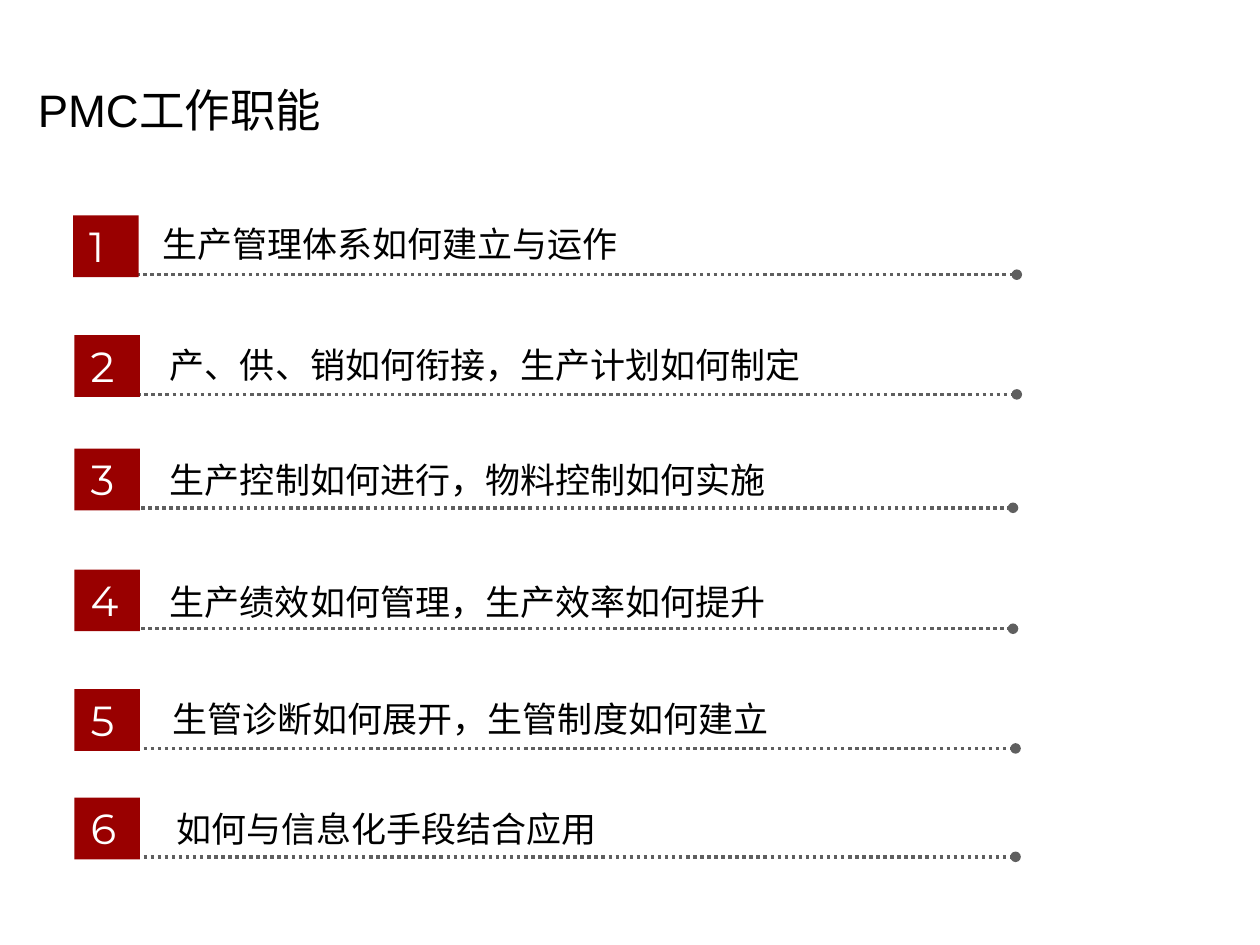
from lxml.etree import SubElement
from pptx import Presentation
from pptx.dml.color import RGBColor
from pptx.enum.dml import MSO_LINE_DASH_STYLE as Dash
from pptx.enum.shapes import MSO_CONNECTOR as Connector, MSO_SHAPE as Shape
from pptx.enum.text import MSO_ANCHOR as Anchor, MSO_AUTO_SIZE as AutoSize, PP_ALIGN as Align
from pptx.oxml.ns import qn
from pptx.util import Inches, Pt

TITLE = "PMC工作职能"
ROWS = [
    {"text": "生产管理体系如何建立与运作", "badge": (0.58, 1.71), "box": (1.19, 1.72, 6.8), "rule": (1.08, 8.07)},
    {"text": "产、供、销如何衔接，生产计划如何制定", "badge": (0.59, 2.66), "box": (1.25, 2.68, 5.95), "rule": (1.09, 8.07)},
    {"text": "生产控制如何进行，物料控制如何实施", "badge": (0.59, 3.56), "box": (1.25, 3.59, 6.11), "rule": (1.12, 8.04)},
    {"text": "生产绩效如何管理，生产效率如何提升", "badge": (0.59, 4.52), "box": (1.25, 4.56, 5.07), "rule": (1.12, 8.04)},
    {"text": "生管诊断如何展开，生管制度如何建立", "badge": (0.59, 5.47), "box": (1.27, 5.49, 5.07), "rule": (1.14, 8.06)},
    {"text": "如何与信息化手段结合应用", "badge": (0.59, 6.33), "box": (1.3, 6.36, 5.07), "rule": (1.14, 8.06)},
]
THEME = {
    "badge": RGBColor(0x99, 0x00, 0x00),
    "rule": RGBColor(0x5F, 0x5F, 0x5F),
    "title": {"name": "Arial", "size": Pt(26), "color": RGBColor(0, 0, 0)},
    "item": {"name": "Arial", "size": Pt(20), "color": RGBColor(0, 0, 0)},
    "number": {"name": "Montserrat", "size": Pt(24), "color": RGBColor(255, 255, 255)},
}
BADGE_SIZE = (0.52, 0.49)
NUMBER_SIZE = (0.49, 0.5)
ITEM_HEIGHT = 0.43
RULE_DROP = 0.47


def write_text(shape, text, style):
    frame = shape.text_frame
    frame.text = text
    settings = {"word_wrap": True, "auto_size": AutoSize.SHAPE_TO_FIT_TEXT, "vertical_anchor": Anchor.TOP}
    for name, value in settings.items():
        setattr(frame, name, value)
    paragraph = frame.paragraphs[0]
    paragraph.alignment = Align.LEFT
    font = paragraph.runs[0].font
    for name in ("name", "size"):
        setattr(font, name, style[name])
    font.color.rgb = style["color"]


def add_text(shapes, place, text, style):
    box = shapes.add_textbox(*map(Inches, place))
    write_text(box, text, THEME[style])


def add_rule(shapes, start, end, top):
    rule = shapes.add_connector(Connector.STRAIGHT, *map(Inches, (start, top, end, top)))
    rule.line.color.rgb = THEME["rule"]
    rule.line.width = Pt(2)
    rule.line.dash_style = Dash.ROUND_DOT
    properties = rule.line._get_or_add_ln()
    properties.find(qn("a:prstDash")).set("val", "sysDot")
    SubElement(properties, qn("a:tailEnd"), type="oval")
    SubElement(rule._element.spPr, qn("a:effectLst"))


def add_badge(shapes, left, top, number):
    group = shapes.add_group_shape()
    square = group.shapes.add_shape(Shape.RECTANGLE, *map(Inches, (left, top, *BADGE_SIZE)))
    square.shadow.inherit = False
    square.fill.solid()
    square.fill.fore_color.rgb = THEME["badge"]
    square.line.fill.background()
    add_text(group.shapes, (left + 0.03, top - 0.01, *NUMBER_SIZE), str(number), "number")


def main():
    presentation = Presentation()
    presentation.slide_width, presentation.slide_height = Inches(10), Inches(7.5)
    slide = presentation.slides.add_slide(presentation.slide_layouts[5])
    title = slide.shapes.title
    for name, value in {"left": 0.2, "top": 0.6, "width": 3.47, "height": 0.53}.items():
        setattr(title, name, Inches(value))
    write_text(title, TITLE, THEME["title"])

    for number, row in enumerate(ROWS, 1):
        left, top = row["badge"]
        add_rule(slide.shapes, *row["rule"], top + RULE_DROP)
        add_badge(slide.shapes, left, top, number)
        add_text(slide.shapes, (*row["box"], ITEM_HEIGHT), row["text"], "item")
    presentation.save("out.pptx")


if __name__ == "__main__":
    main()
